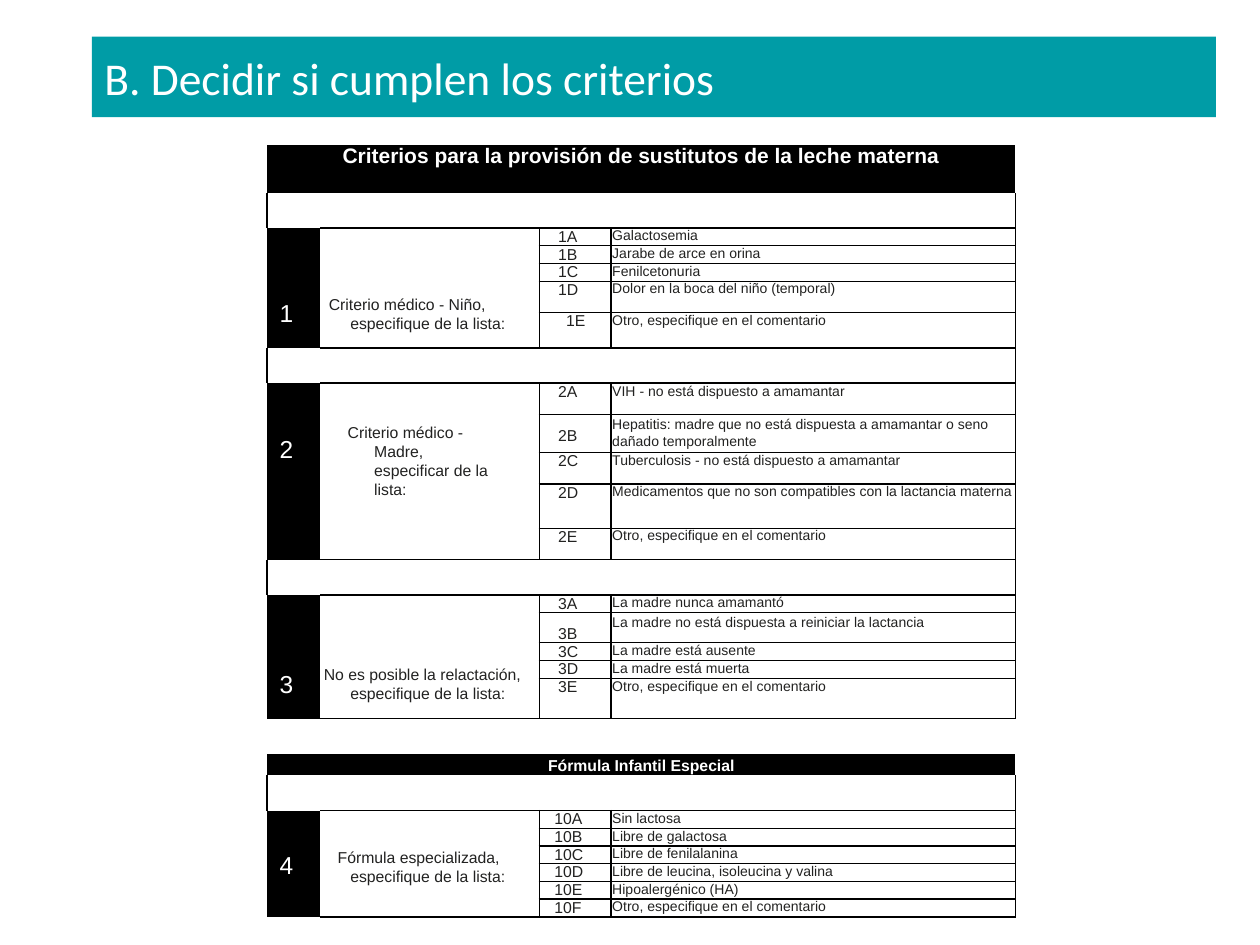
from dataclasses import dataclass

from lxml import etree
from pptx import Presentation
from pptx.dml.color import RGBColor
from pptx.enum.shapes import MSO_SHAPE
from pptx.enum.text import MSO_ANCHOR, PP_ALIGN
from pptx.oxml.ns import qn
from pptx.table import Table, _Cell
from pptx.text.text import TextFrame
from pptx.util import Inches, Pt

CENTER, LEFT = PP_ALIGN.CENTER, PP_ALIGN.LEFT
MIDDLE = MSO_ANCHOR.MIDDLE
RECTANGLE = MSO_SHAPE.RECTANGLE
NO_GRID_STYLE = "{2D5ABB26-0587-4C30-8999-92F81FD0307C}"


@dataclass(frozen=True)
class Theme:
    teal: str = "009CA6"
    black: str = "000000"
    white: str = "FFFFFF"
    ink: str = "222221"
    title_font: str = "Calibri"
    table_font: str = "Arial"
    title_size: int = 26
    heading_size: int = 12
    number_size: int = 14
    label_size: int = 9
    item_size: int = 8
    thin: float = 0.75
    thick: float = 1


@dataclass(frozen=True)
class Item:
    code: str
    description: str
    height: float = 0.14
    code_top: float = 0


@dataclass(frozen=True)
class Criterion:
    number: str
    label: str
    number_top: float
    label_top: float
    indent: float
    hanging: float
    label_right: float
    items: tuple[Item, ...]


THEME = Theme()
COLUMNS = (0.42, 1.74, 0.57, 3.21)
HEADING_HEIGHT, SUBHEADING_HEIGHT, GAP_HEIGHT = 0.38, 0.17, 0.28
OTHER = "Otro, especifique en el comentario"

CHILD = Criterion("1", "Criterio médico - Niño, especifique de la lista:",
                  0.57, 0.53, 0.24, -0.17, 0, (
                      Item("1A", "Galactosemia"),
                      Item("1B", "Jarabe de arce en orina"),
                      Item("1C", "Fenilcetonuria"),
                      Item("1D", "Dolor en la boca del niño (temporal)", 0.25),
                      Item("1E", OTHER, 0.28)))
MOTHER = Criterion("2", "Criterio médico - Madre, especificar de la lista:",
                   0.42, 0.32, 0.43, -0.21, 0.35, (
                       Item("2A", "VIH - no está dispuesto a amamantar", 0.25),
                       Item("2B", "Hepatitis: madre que no está dispuesta a amamantar "
                                  "o seno dañado temporalmente", 0.3, 0.1),
                       Item("2C", "Tuberculosis - no está dispuesto a amamantar", 0.25),
                       Item("2D", "Medicamentos que no son compatibles con la lactancia "
                                  "materna", 0.35),
                       Item("2E", OTHER, 0.25)))
RELACTATION = Criterion("3", "No es posible la relactación, especifique de la lista:",
                        0.61, 0.56, 0.24, -0.21, 0, (
                            Item("3A", "La madre nunca amamantó"),
                            Item("3B", "La madre no está dispuesta a reiniciar la lactancia",
                                 0.24, 0.1),
                            Item("3C", "La madre está ausente"),
                            Item("3D", "La madre está muerta"),
                            Item("3E", OTHER, 0.32)))
FORMULA = Criterion("4", "Fórmula especializada, especifique de la lista:",
                    0.33, 0.3, 0.24, -0.1, 0, (
                        Item("10A", "Sin lactosa"),
                        Item("10B", "Libre de galactosa"),
                        Item("10C", "Libre de fenilalanina"),
                        Item("10D", "Libre de leucina, isoleucina y valina"),
                        Item("10E", "Hipoalergénico (HA)"),
                        Item("10F", OTHER)))
CRITERIA = (CHILD, MOTHER, RELACTATION, FORMULA)


def write(frame: TextFrame, text: str, *, size: float, color: str = THEME.ink,
          font: str = THEME.table_font, bold: bool = False, align: PP_ALIGN = LEFT,
          indent: float = 0, hanging: float = 0, spacing: float = 1) -> None:
    paragraph = frame.paragraphs[0]
    properties = paragraph._p.get_or_add_pPr()
    properties.set("marL", str(Inches(indent)))
    properties.set("indent", str(Inches(hanging)))
    paragraph.alignment = align
    paragraph.line_spacing = spacing
    run = paragraph.add_run()
    run.text = text
    run.font.name = font
    run.font.size = Pt(size)
    run.font.bold = bold
    run.font.color.rgb = RGBColor.from_string(color)


def set_borders(cell: _Cell, **widths: float) -> None:
    """Draw the sides given as L, R, T or B with widths in points."""
    properties = cell._tc.get_or_add_tcPr()
    sides = [side for side in "LRTB" if side in widths]
    for position, side in enumerate(sides):
        line = etree.Element(qn(f"a:ln{side}"), w=str(Pt(widths[side])))
        fill = etree.SubElement(line, qn("a:solidFill"))
        etree.SubElement(fill, qn("a:srgbClr"), val=THEME.black)
        properties.insert(position, line)


def fill_black(cell: _Cell) -> None:
    cell.fill.solid()
    cell.fill.fore_color.rgb = RGBColor.from_string(THEME.black)


def clear_cells(table: Table) -> None:
    for cell in table.iter_cells():
        cell.fill.background()
        cell.margin_left = cell.margin_right = 0
        cell.margin_top = cell.margin_bottom = 0
        ending = cell.text_frame.paragraphs[0]._p.get_or_add_endParaRPr()
        ending.set("sz", str(THEME.item_size * 100))


def add_heading(table: Table, row: int, text: str, size: float, spacing: float = 1) -> None:
    cell = table.cell(row, 0)
    cell.merge(table.cell(row, len(COLUMNS) - 1))
    fill_black(cell)
    write(cell.text_frame, text, size=size, color=THEME.white, bold=True,
          align=CENTER, spacing=spacing)


def add_gap(table: Table, row: int, bordered: bool = True) -> None:
    cell = table.cell(row, 0)
    cell.merge(table.cell(row, len(COLUMNS) - 1))
    if bordered:
        set_borders(cell, L=THEME.thick, R=THEME.thick)


def add_criterion(table: Table, top: int, criterion: Criterion) -> None:
    last = len(criterion.items) - 1
    number, label = table.cell(top, 0), table.cell(top, 1)
    number.merge(table.cell(top + last, 0))
    label.merge(table.cell(top + last, 1))
    fill_black(number)
    number.margin_top = Inches(criterion.number_top)
    write(number.text_frame, criterion.number, size=THEME.number_size,
          color=THEME.white, indent=0.1)
    label.margin_top = Inches(criterion.label_top)
    label.margin_right = Inches(criterion.label_right)
    write(label.text_frame, criterion.label, size=THEME.label_size, spacing=1.07,
          indent=criterion.indent, hanging=criterion.hanging)
    set_borders(label, T=THEME.thick, R=THEME.thin, B=THEME.thick)

    for offset, item in enumerate(criterion.items):
        code, description = table.cell(top + offset, 2), table.cell(top + offset, 3)
        sides = {"L": THEME.thin, "T": THEME.thin if offset else THEME.thick}
        if offset < last:
            sides["B"] = THEME.thin
        elif criterion is FORMULA:
            sides["B"] = THEME.thick
        set_borders(code, R=THEME.thin, **sides)
        set_borders(description, R=THEME.thick, **sides)
        centered = item.code == "1E"
        code_indent = 0.01 if centered else 0.15 if len(item.code) == 2 else 0.12
        code.margin_top = Inches(item.code_top)
        write(code.text_frame, item.code, size=THEME.label_size, indent=code_indent,
              align=CENTER if centered else LEFT)
        description.margin_top = Inches(0.01 if item.code_top else 0)
        write(description.text_frame, item.description, size=THEME.item_size,
              indent=0.01, spacing=1.07 if item.code_top else 1)


def add_criteria_table(slide) -> None:
    heights = [HEADING_HEIGHT]
    for criterion in CRITERIA:
        if criterion is FORMULA:
            heights += [GAP_HEIGHT, SUBHEADING_HEIGHT]
        heights += [GAP_HEIGHT, *(item.height for item in criterion.items)]
    table = slide.shapes.add_table(len(heights), len(COLUMNS), Inches(2.12), Inches(1.15),
                                   Inches(sum(COLUMNS)), Inches(sum(heights))).table
    table.first_row = table.horz_banding = False
    table._tbl.tblPr.find(qn("a:tableStyleId")).text = NO_GRID_STYLE
    for column, width in zip(table.columns, COLUMNS):
        column.width = Inches(width)
    for row, height in zip(table.rows, heights):
        row.height = Inches(height)
    clear_cells(table)

    add_heading(table, 0, "Criterios para la provisión de sustitutos de la leche materna",
                THEME.heading_size)
    next_row = 1
    for criterion in CRITERIA:
        if criterion is FORMULA:
            add_gap(table, next_row, bordered=False)
            add_heading(table, next_row + 1, "Fórmula Infantil Especial",
                        THEME.label_size, 1.18)
            next_row += 2
        add_gap(table, next_row)
        add_criterion(table, next_row + 1, criterion)
        next_row += 1 + len(criterion.items)


def add_title(slide) -> None:
    banner = slide.shapes.add_shape(RECTANGLE, Inches(0.73), Inches(0.29),
                                    Inches(8.92), Inches(0.64))
    banner.shadow.inherit = False
    banner.fill.solid()
    banner.fill.fore_color.rgb = RGBColor.from_string(THEME.teal)
    banner.line.fill.background()
    banner.text_frame.vertical_anchor = MIDDLE
    write(banner.text_frame, "B. Decidir si cumplen los criterios", size=THEME.title_size,
          color=THEME.white, font=THEME.title_font)


def main() -> None:
    deck = Presentation()
    deck.slide_width, deck.slide_height = Inches(10), Inches(7.5)
    slide = deck.slides.add_slide(deck.slide_layouts[6])
    add_criteria_table(slide)
    add_title(slide)
    deck.save("out.pptx")


if __name__ == "__main__":
    main()
